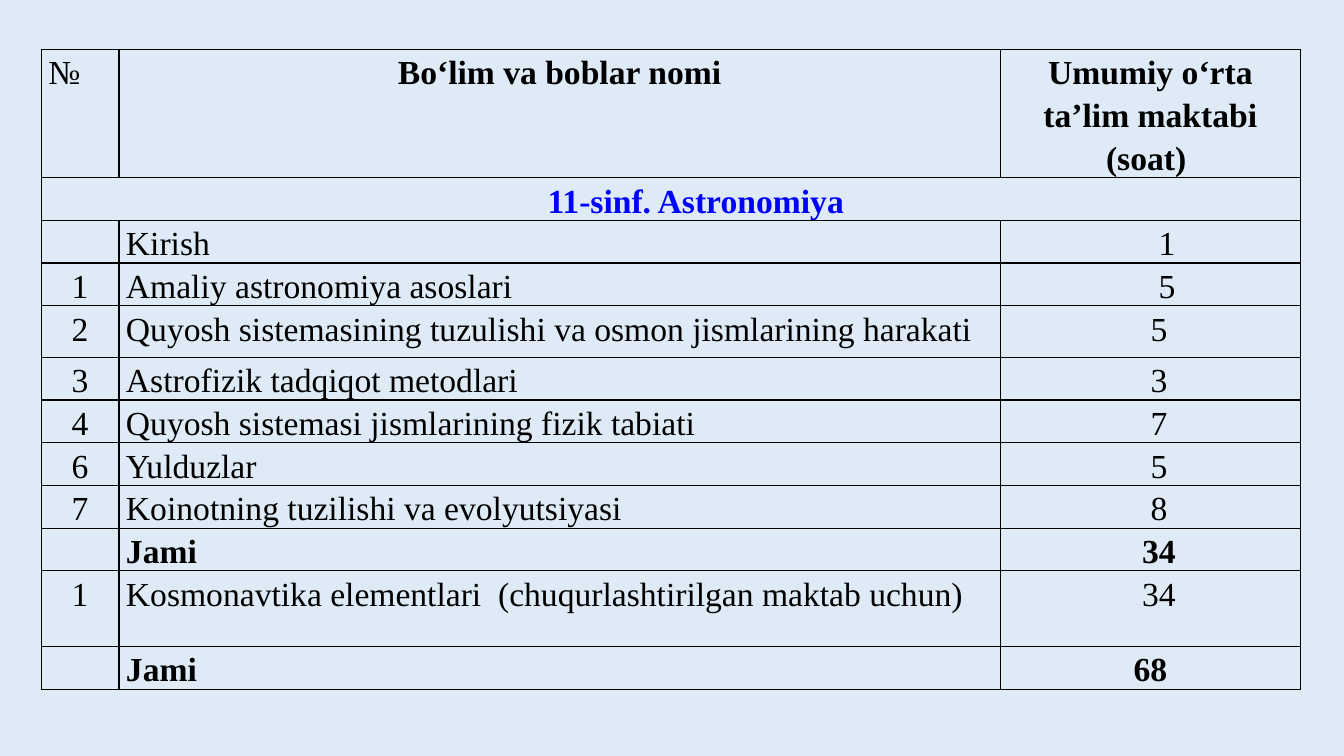
from dataclasses import dataclass

from lxml.etree import SubElement
from pptx import Presentation
from pptx.dml.color import RGBColor
from pptx.enum.text import PP_ALIGN
from pptx.oxml.ns import qn
from pptx.table import _Cell
from pptx.util import Inches, Pt


@dataclass(frozen=True)
class Theme:
    background: str = "DEEBF7"
    text: str = "000000"
    accent: str = "0000FF"
    border: str = "000000"
    font: str = "Times New Roman"
    size: int = 24
    spacing: float = 1.15
    border_width: int = 1


@dataclass(frozen=True)
class Chapter:
    number: str
    name: str
    hours: str
    indent: float = 0.17
    height: float = 0.38
    align: PP_ALIGN = PP_ALIGN.LEFT
    bold: bool = False


THEME = Theme()
COLUMNS = (0.77, 8.74, 2.98)
HEADER_HEIGHT = 1.13
TITLE_HEIGHT = 0.38
CHAPTERS = (
    Chapter("", "Kirish ", "1", indent=0.33, align=PP_ALIGN.JUSTIFY),
    Chapter("1", "Amaliy astronomiya asoslari", "5", indent=0.33, align=PP_ALIGN.JUSTIFY),
    Chapter("2", "Quyosh sistemasining tuzulishi va osmon jismlarining harakati", "5",
            height=0.51, align=PP_ALIGN.JUSTIFY),
    Chapter("3", "Astrofizik tadqiqot metodlari", "3"),
    Chapter("4", "Quyosh sistemasi jismlarining fizik tabiati", "7"),
    Chapter("6", "Yulduzlar", "5"),
    Chapter("7", "Koinotning tuzilishi va evolyutsiyasi", "8"),
    Chapter("", "Jami", "34", bold=True),
    Chapter("1", "Kosmonavtika elementlari  (chuqurlashtirilgan maktab uchun)", "34",
            height=0.75, align=PP_ALIGN.JUSTIFY),
    Chapter("", "Jami", "68", indent=0, bold=True),
)


def style_cell(cell: _Cell) -> None:
    cell.margin_left = cell.margin_right = Inches(0.07)
    cell.margin_top = cell.margin_bottom = 0
    tcPr = cell._tc.get_or_add_tcPr()
    for side in ("lnL", "lnR", "lnT", "lnB"):
        ln = SubElement(tcPr, qn(f"a:{side}"), w=str(Pt(THEME.border_width)))
        fill = SubElement(ln, qn("a:solidFill"))
        SubElement(fill, qn("a:srgbClr"), val=THEME.border)
    cell.fill.background()


def write_cell(cell: _Cell, text: str, align: PP_ALIGN = PP_ALIGN.CENTER,
               bold: bool = False, color: str = THEME.text, indent: float = 0) -> None:
    tf = cell.text_frame
    tf.text = text
    for p in tf.paragraphs:
        p.alignment = align
        p.line_spacing = THEME.spacing
        p.font.name = THEME.font
        p.font.size = Pt(THEME.size)
        p.font.bold = bold
        p.font.color.rgb = RGBColor.from_string(color)
        if indent:
            pPr = p._p.get_or_add_pPr()
            pPr.set("marL", "0")
            pPr.set("indent", str(Inches(indent)))


def main() -> None:
    prs = Presentation()
    prs.slide_width = Inches(13.33)
    prs.slide_height = Inches(7.5)
    s = prs.slides.add_slide(prs.slide_layouts[6])
    s.background.fill.solid()
    s.background.fill.fore_color.rgb = RGBColor.from_string(THEME.background)

    heights = (HEADER_HEIGHT, TITLE_HEIGHT, *(c.height for c in CHAPTERS))
    table = s.shapes.add_table(len(heights), len(COLUMNS), Inches(0.41), Inches(0.49),
                               Inches(sum(COLUMNS)), Inches(sum(heights))).table
    table.first_row = False
    table.horz_banding = False
    for column, width in zip(table.columns, COLUMNS):
        column.width = Inches(width)
    for row, height in zip(table.rows, heights):
        row.height = Inches(height)
    for cell in table.iter_cells():
        style_cell(cell)

    write_cell(table.cell(0, 0), "№", PP_ALIGN.LEFT)
    write_cell(table.cell(0, 1), "Bo‘lim va boblar nomi", bold=True)
    write_cell(table.cell(0, 2), "Umumiy o‘rta ta’lim maktabi\n(soat) ", bold=True)

    title = table.cell(1, 0)
    title.merge(table.cell(1, len(COLUMNS) - 1))
    write_cell(title, "11-sinf. Astronomiya", bold=True, color=THEME.accent, indent=0.49)

    for i, chapter in enumerate(CHAPTERS, start=2):
        write_cell(table.cell(i, 0), chapter.number)
        write_cell(table.cell(i, 1), chapter.name, chapter.align, chapter.bold)
        write_cell(table.cell(i, 2), chapter.hours, bold=chapter.bold, indent=chapter.indent)

    prs.save("out.pptx")


if __name__ == "__main__":
    main()
